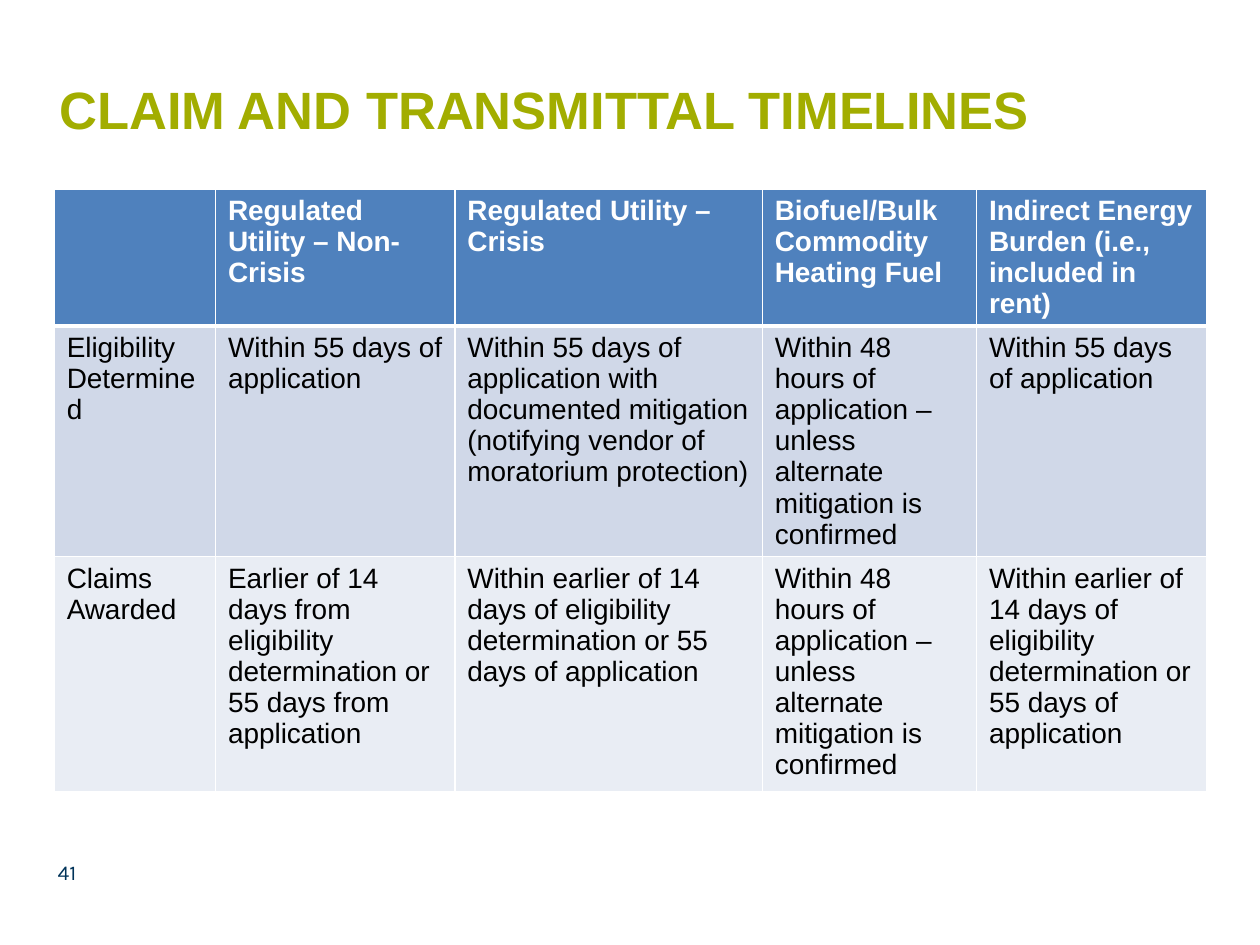
from dataclasses import dataclass

from lxml.etree import SubElement
from pptx import Presentation
from pptx.dml.color import RGBColor
from pptx.enum.text import MSO_ANCHOR, PP_ALIGN
from pptx.oxml.ns import qn
from pptx.util import Inches, Pt


@dataclass(frozen=True)
class Theme:
    title = {"name": "Arial", "size": Pt(30), "bold": True, "color": "A2AD00"}
    header = {"name": "Arial", "size": Pt(16), "bold": True, "color": "FFFFFF"}
    body = {"name": "Arial", "size": Pt(16), "bold": False, "color": "000000"}
    number = {"name": "Karla", "size": Pt(12), "bold": False, "color": "003359"}
    row_fills = ("4F81BD", "D0D8E8", "E9EDF4")
    border = "FFFFFF"
    thin = Pt(1)
    thick = Pt(3)


THEME = Theme()
COLUMN_WIDTHS = (1.28, 1.9, 2.44, 1.7, 1.83)
ROW_HEIGHTS = (1.07, 1.83, 1.87)
FUEL_DEADLINE = "Within 48 hours of application – unless alternate mitigation is confirmed"
TIMELINES = (
    ("", "Regulated Utility – Non-Crisis", "Regulated Utility – Crisis",
     "Biofuel/Bulk Commodity Heating Fuel",
     "Indirect Energy Burden (i.e., included in rent)"),
    ("Eligibility Determined", "Within 55 days of application",
     "Within 55 days of application with documented mitigation "
     "(notifying vendor of moratorium protection)",
     FUEL_DEADLINE, "Within 55 days of application"),
    ("Claims Awarded",
     "Earlier of 14 days from eligibility determination or 55 days from application",
     "Within earlier of 14 days of eligibility determination or 55 days of application",
     FUEL_DEADLINE,
     "Within earlier of 14 days of eligibility determination or 55 days of application"),
)


def write_text(frame, text, style):
    para = frame.paragraphs[0]
    para.text = text
    para.alignment = PP_ALIGN.LEFT
    for name, value in style.items():
        if name == "color":
            para.font.color.rgb = RGBColor.from_string(value)
        else:
            setattr(para.font, name, value)
        for span in para.runs:
            if name == "color":
                span.font.color.rgb = RGBColor.from_string(value)
            else:
                setattr(span.font, name, value)


def place_text(box, bounds, text, style):
    box.left, box.top, box.width, box.height = map(Inches, bounds)
    box.text_frame.word_wrap = True
    box.text_frame.vertical_anchor = MSO_ANCHOR.MIDDLE
    write_text(box.text_frame, text, style)


def set_borders(cell, widths):
    """Draw cell borders; call before the fill, which must follow them in the XML."""
    properties = cell._tc.get_or_add_tcPr()
    for side, width in widths.items():
        line = SubElement(properties, qn(f"a:ln{side}"), w=str(width))
        fill = SubElement(line, qn("a:solidFill"))
        SubElement(fill, qn("a:srgbClr"), val=THEME.border)


def add_timeline_table(page):
    frame = page.shapes.add_table(
        len(ROW_HEIGHTS), len(COLUMN_WIDTHS), Inches(0.43), Inches(1.5),
        Inches(sum(COLUMN_WIDTHS)), Inches(sum(ROW_HEIGHTS)))
    table = frame.table
    for column, width in zip(table.columns, COLUMN_WIDTHS):
        column.width = Inches(width)
    for index, (row, height) in enumerate(zip(table.rows, ROW_HEIGHTS)):
        row.height = Inches(height)
        widths = dict.fromkeys("LRTB", THEME.thin)
        if index < 2:
            widths["B" if index == 0 else "T"] = THEME.thick
        for cell, text in zip(row.cells, TIMELINES[index]):
            set_borders(cell, widths)
            cell.fill.solid()
            cell.fill.fore_color.rgb = RGBColor.from_string(THEME.row_fills[index])
            write_text(cell.text_frame, text, THEME.body if index else THEME.header)


def main():
    deck = Presentation()
    deck.slide_width, deck.slide_height = Inches(10), Inches(7.5)
    page = deck.slides.add_slide(deck.slide_layouts[5])
    place_text(page.shapes.title, (0.37, 0.3, 9.15, 1.13),
               "CLAIM AND TRANSMITTAL TIMELINES", THEME.title)
    add_timeline_table(page)
    number_box = page.shapes.add_textbox(0, 0, 0, 0)
    place_text(number_box, (0.36, 6.72, 2.33, 0.4), "41", THEME.number)
    deck.save("out.pptx")


if __name__ == "__main__":
    main()
